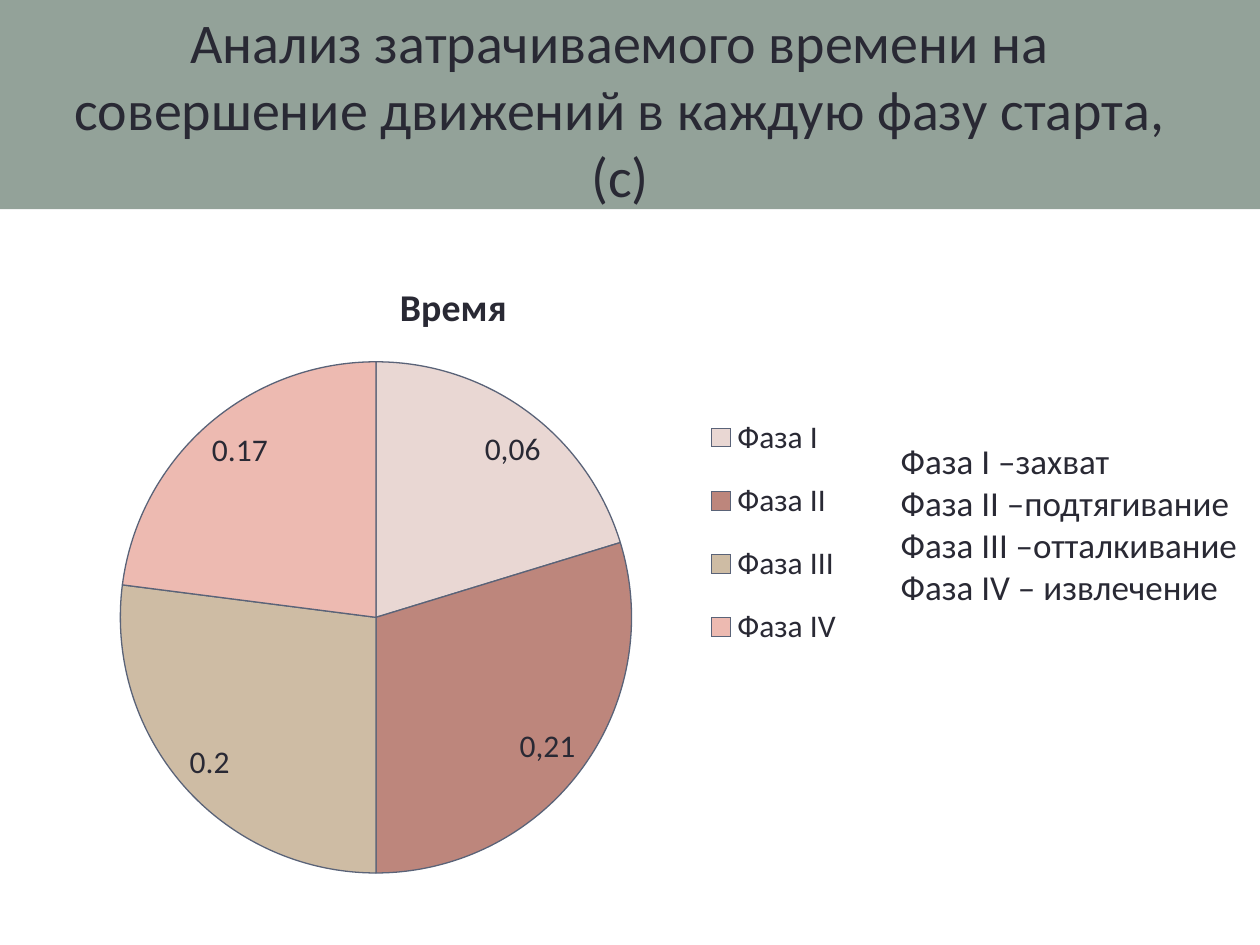
from pptx import Presentation
from pptx.chart.data import CategoryChartData
from pptx.dml.color import RGBColor
from pptx.enum.chart import XL_CHART_TYPE, XL_LABEL_POSITION, XL_LEGEND_POSITION
from pptx.enum.shapes import MSO_SHAPE
from pptx.enum.text import MSO_ANCHOR, PP_ALIGN
from pptx.oxml import parse_xml
from pptx.oxml.ns import nsdecls
from pptx.util import Inches, Pt

PIE = XL_CHART_TYPE.PIE
INSIDE_END = XL_LABEL_POSITION.INSIDE_END
LEGEND_RIGHT = XL_LEGEND_POSITION.RIGHT
RECTANGLE = MSO_SHAPE.RECTANGLE
MIDDLE = MSO_ANCHOR.MIDDLE
CENTER = PP_ALIGN.CENTER

INK = RGBColor(0x29, 0x29, 0x34)
SAGE = RGBColor(0x93, 0xA2, 0x99)
OUTLINE = RGBColor(0x5A, 0x63, 0x78)
FONT = "Calibri"

# phase, action, seconds, slice colour, custom label
PHASES = [
    ("Фаза I", "–захват", 0.15, RGBColor(0xE9, 0xD7, 0xD3), "0,06"),
    ("Фаза II", "–подтягивание", 0.22, RGBColor(0xBD, 0x86, 0x7C), "0,21"),
    ("Фаза III", "–отталкивание", 0.2, RGBColor(0xCE, 0xBC, 0xA4), None),
    ("Фаза IV", "– извлечение", 0.17, RGBColor(0xED, 0xBA, 0xB1), None),
]


def style(font, size, bold=False):
    font.name, font.size, font.bold = FONT, Pt(size), bold
    font.color.rgb = INK


def layout_xml(x, y, w=None, h=None, inner=False, mode="edge"):
    """Manual chart layout, in shares of the chart's size."""
    parts = ['<c:layoutTarget val="inner"/>'] if inner else []
    parts += [f'<c:{axis}Mode val="{mode}"/>' for axis in "xy"]
    parts += [f'<c:{key} val="{share}"/>'
              for key, share in zip("xywh", (x, y, w, h)) if share is not None]
    return parse_xml(f'<c:layout {nsdecls("c")}><c:manualLayout>'
                     f'{"".join(parts)}</c:manualLayout></c:layout>')


deck = Presentation()
deck.slide_width, deck.slide_height = Inches(10), Inches(7.5)
page = deck.slides.add_slide(deck.slide_layouts[5])

# Header bands
for top, width, height in [(0, 10, 0.4), (0.36, 10.04, 1.3)]:
    band = page.shapes.add_shape(RECTANGLE, 0, Inches(top), Inches(width), Inches(height))
    band.shadow.inherit = False
    band.fill.solid()
    band.fill.fore_color.rgb = SAGE
    band.line.fill.background()

# Title, raised above the bands
title = page.shapes.title
title.element.getparent().append(title.element)
title.left, title.top = Inches(0.35), Inches(0)
title.width, title.height = Inches(9.14), Inches(1.72)
title.text_frame.word_wrap = True
title.text_frame.vertical_anchor = MIDDLE
para = title.text_frame.paragraphs[0]
para.alignment = CENTER
span = para.add_run()
span.text = "Анализ затрачиваемого времени на совершение движений в каждую фазу старта, (с)"
style(span.font, 32)

# Pie of the time spent in each phase
data = CategoryChartData()
data.categories = [phase[0] for phase in PHASES]
data.add_series("Время", [phase[2] for phase in PHASES])
chart = page.shapes.add_chart(
    PIE, Inches(0.2), Inches(2.02), Inches(6.79), Inches(5.01), data).chart
style(chart.font, 18)

chart.has_title = True
heading = chart.chart_title.text_frame.paragraphs[0].add_run()
heading.text = "Время"
style(heading.font, 21.6, bold=True)
chart.chart_title.include_in_layout = False

chart.has_legend = True
chart.legend.position = LEGEND_RIGHT
chart.legend.include_in_layout = False
style(chart.legend.font, 18)

plot = chart.plots[0]
plot.vary_by_categories = True
series = plot.series[0]
labels = series.data_labels
labels.show_value = True
labels.show_percentage = False
labels.number_format, labels.number_format_is_linked = "General", False
labels.position = INSIDE_END
style(labels.font, 18)

for index, (name, action, seconds, colour, label) in enumerate(PHASES):
    point = series.points[index]
    point.format.fill.solid()
    point.format.fill.fore_color.rgb = colour
    point.format.line.color.rgb = OUTLINE
    point.format.line.width = Pt(0.75)
    if label:
        span = point.data_label.text_frame.paragraphs[0].add_run()
        span.text = label
        style(span.font, 18)
        point.data_label.position = INSIDE_END

# Places of the heading, the pie, the legend and the first label within the chart
plot_area = chart.element.chart.plotArea
for old in chart.element.xpath(
        ".//c:plotArea/c:layout | .//c:title/c:layout | .//c:legend/c:layout | .//c:dLbl/c:layout"):
    old.getparent().remove(old)
plot_area.insert(0, layout_xml(0.11, 0.17, 0.6, 0.81, inner=True))
chart.element.xpath(".//c:title/c:tx")[0].addnext(layout_xml(0.43, 0.03))
chart.element.xpath(".//c:legend/c:legendPos")[0].addnext(layout_xml(0.79, 0.22, 0.17, 0.44))
chart.element.xpath(".//c:dLbl/c:idx")[0].addnext(layout_xml(0.02, 0.02, mode="factor"))

# What each phase means
box = page.shapes.add_textbox(Inches(7.05), Inches(3.44), Inches(3.52), Inches(1.45))
box.text_frame.word_wrap = True
for index, (name, action, *_) in enumerate(PHASES):
    para = box.text_frame.add_paragraph() if index else box.text_frame.paragraphs[0]
    span = para.add_run()
    span.text = f"{name} {action}"
    style(span.font, 20)

deck.save("out.pptx")
